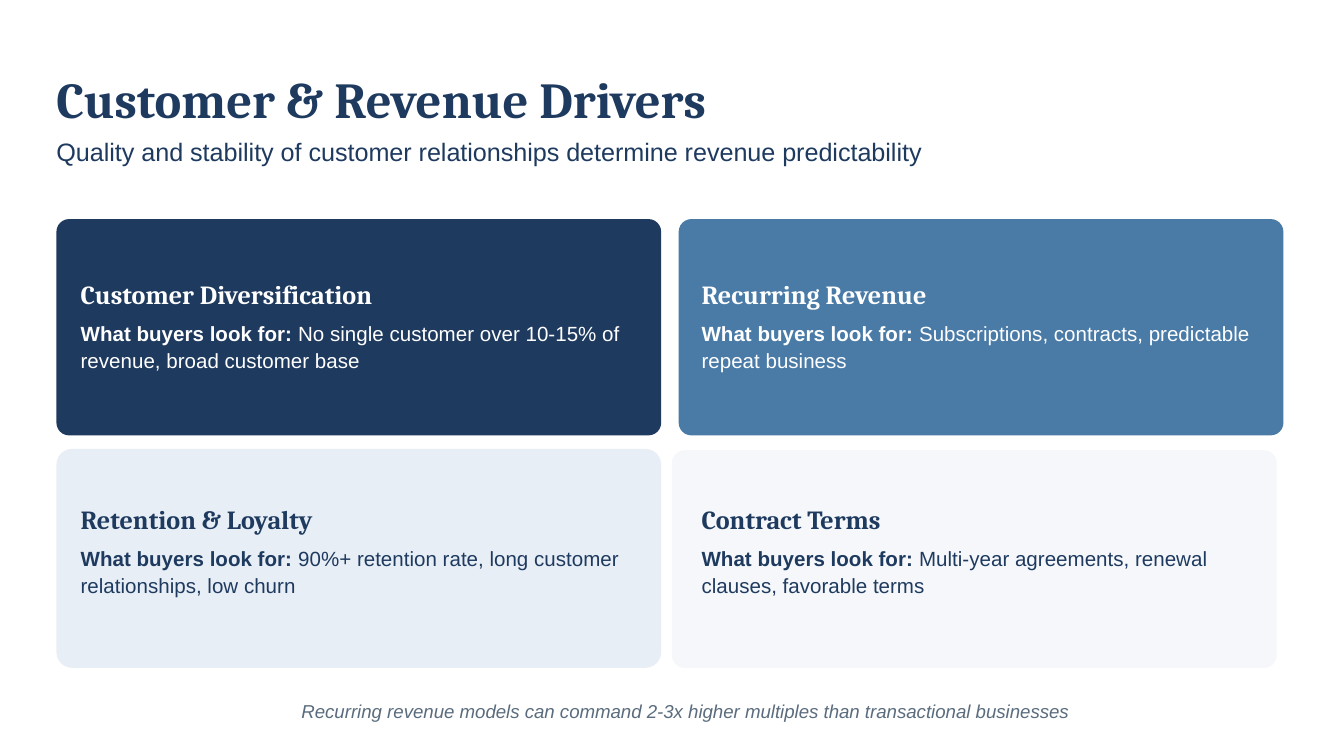
"""Build the customer and revenue drivers slide."""
import dataclasses

import pptx
import pptx.dml.color
import pptx.enum.shapes
import pptx.enum.text
import pptx.util

Inches = pptx.util.Inches
Pt = pptx.util.Pt
Align = pptx.enum.text.PP_ALIGN


@dataclasses.dataclass(frozen=True)
class Theme:
    """Colours, fonts and type sizes of the slide."""
    navy: str = "1E3A5F"
    blue: str = "4A7BA7"
    mist: str = "E8EEF5"
    pale: str = "F5F7FA"
    white: str = "FFFFFF"
    slate: str = "5A6C7D"
    serif: str = "Cambria"
    sans: str = "Arial"
    title: float = 27
    subtitle: float = 13.5
    heading: float = 14
    body: float = 11
    note: float = 10


THEME = Theme()
COLUMN_LEFTS = (0.6, 5.22)
COLUMN_WIDTHS = (4.09, 4.15)
HEADING_TOPS = (2.12, 3.79)
CARD_WIDTH = 4.5
BODY_OFFSET = 0.25
LEAD = "What buyers look for:"

CARDS = (
    (0, 0, (0.42, 1.63, 1.61), 0.059, THEME.navy, THEME.white,
     "Customer Diversification",
     " No single customer over 10-15% of revenue, broad customer base"),
    (0, 1, (0.42, 3.34, 1.63), 0.072, THEME.mist, THEME.navy,
     "Retention & Loyalty",
     " 90%+ retention rate, long customer relationships, low churn"),
    (1, 0, (5.05, 1.63, 1.61), 0.059, THEME.blue, THEME.white,
     "Recurring Revenue",
     " Subscriptions, contracts, predictable repeat business"),
    (1, 1, (5, 3.35, 1.62), 0.059, THEME.pale, THEME.navy,
     "Contract Terms",
     " Multi-year agreements, renewal clauses, favorable terms"),
)


def rgb(value):
    """Turn a hex string into a colour."""
    return pptx.dml.color.RGBColor.from_string(value)


def add_span(para, text, font, size, color, bold=False, italic=False):
    """Add one formatted run to a paragraph."""
    span = para.add_run()
    span.text = text
    span.font.name = font
    span.font.size = Pt(size)
    span.font.color.rgb = rgb(color)
    span.font.bold = bold
    span.font.italic = italic


def prepare_text(box, line, after=0, align=Align.LEFT):
    """Clear the margins of a box and return its spaced first paragraph."""
    frame = box.text_frame
    frame.margin_left = frame.margin_right = 0
    frame.margin_top = frame.margin_bottom = 0
    frame.word_wrap = True
    frame.auto_size = pptx.enum.text.MSO_AUTO_SIZE.NONE
    frame.vertical_anchor = pptx.enum.text.MSO_ANCHOR.TOP
    para = frame.paragraphs[0]
    para.line_spacing = Pt(line)
    para.space_before = Pt(0)
    para.space_after = Pt(after)
    para.alignment = align
    return para


def add_text(page, left, top, width, height, line, **spacing):
    """Add a text box and return its first paragraph."""
    box = page.shapes.add_textbox(
        Inches(left), Inches(top), Inches(width), Inches(height))
    return prepare_text(box, line, **spacing)


def set_title(page, text):
    """Place and fill the title placeholder."""
    box = page.shapes.title
    box.left, box.top = Inches(0.42), Inches(0.54)
    box.width, box.height = Inches(7), Inches(0.42)
    para = prepare_text(box, 30, after=6)
    add_span(para, text, THEME.serif, THEME.title, THEME.navy, bold=True)


def add_card(page, column, row, place, rounding, fill, ink, heading, body):
    """Add a rounded panel with its heading and description."""
    left, top, height = place
    panel = page.shapes.add_shape(
        pptx.enum.shapes.MSO_SHAPE.ROUNDED_RECTANGLE,
        Inches(left), Inches(top), Inches(CARD_WIDTH), Inches(height))
    panel.adjustments[0] = rounding
    panel.shadow.inherit = False
    panel.fill.solid()
    panel.fill.fore_color.rgb = rgb(fill)
    panel.line.fill.background()

    text_left, width = COLUMN_LEFTS[column], COLUMN_WIDTHS[column]
    text_top = HEADING_TOPS[row]
    para = add_text(page, text_left, text_top, width, 0.19, 13.5, after=4.5)
    add_span(para, heading, THEME.serif, THEME.heading, ink, bold=True)
    para = add_text(page, text_left, text_top + BODY_OFFSET, width, 0.41, 14.6)
    add_span(para, LEAD, THEME.sans, THEME.body, ink, bold=True)
    add_span(para, body, THEME.sans, THEME.body, ink)


def main():
    """Build and save the deck."""
    deck = pptx.Presentation()
    deck.slide_width = Inches(10)
    deck.slide_height = Inches(10 * 9 / 16)
    page = deck.slides.add_slide(deck.slide_layouts[5])
    page.background.fill.solid()
    page.background.fill.fore_color.rgb = rgb(THEME.white)

    set_title(page, "Customer & Revenue Drivers")
    para = add_text(page, 0.42, 0.95, 9.35, 0.29, 21, after=9)
    add_span(para, "Quality and stability of customer relationships determine "
             "revenue predictability", THEME.sans, THEME.subtitle, THEME.navy)
    for card in CARDS:
        add_card(page, *card)
    para = add_text(page, 0.42, 5.18, 9.35, 0.19, 14, align=Align.CENTER)
    add_span(para, "Recurring revenue models can command 2-3x higher multiples "
             "than transactional businesses", THEME.sans, THEME.note,
             THEME.slate, italic=True)
    deck.save("out.pptx")


if __name__ == "__main__":
    main()
